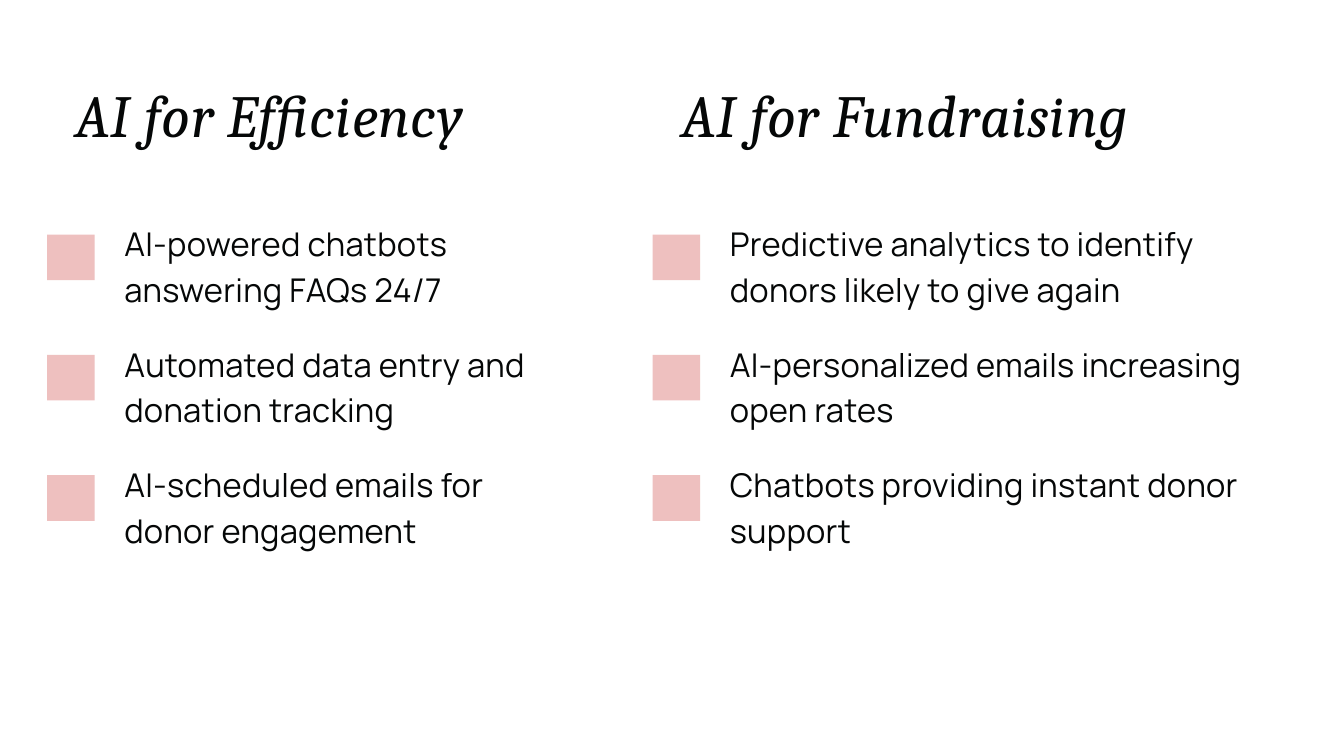
import pptx
import pptx.util
import pptx.dml.color
import pptx.enum.shapes
import pptx.enum.text

Inches = pptx.util.Inches
Pt = pptx.util.Pt
RGB = pptx.dml.color.RGBColor.from_string

COLORS = {"ink": "050707", "marker": "EEC0BF"}
COLUMNS = [
    (0.7, "AI for Efficiency", [
        ["AI-powered chatbots", "answering FAQs 24/7"],
        ["Automated data entry and donation tracking"],
        ["AI-scheduled emails for", "donor engagement"],
    ]),
    (9.71, "AI for Fundraising", [
        ["Predictive analytics to identify donors likely to give again"],
        ["AI-personalized emails increasing open rates"],
        ["Chatbots providing instant donor support"],
    ]),
]
ROW_TOP, ROW_STEP = 3.24, 1.79


def place(sp, left, top, width, height):
    sp.left, sp.top = Inches(left), Inches(top)
    sp.width, sp.height = Inches(width), Inches(height)


def write(sp, lines, font, size, leading, spacing, italic=False):
    tf = sp.text_frame
    tf.margin_left = tf.margin_right = tf.margin_top = tf.margin_bottom = 0
    tf.word_wrap = True
    tf.auto_size = pptx.enum.text.MSO_AUTO_SIZE.SHAPE_TO_FIT_TEXT
    tf.vertical_anchor = pptx.enum.text.MSO_ANCHOR.TOP
    tf.text = "\n".join(lines)
    for p in tf.paragraphs:
        p.alignment = pptx.enum.text.PP_ALIGN.LEFT
        p.line_spacing = Pt(leading)
        p.space_before = Pt(0)
        p.font.name = font
        p.font.size = Pt(size)
        p.font.italic = italic
        p.font.color.rgb = RGB(COLORS["ink"])
        for r in p.runs:
            r._r.get_or_add_rPr().set("spc", str(spacing))


prs = pptx.Presentation()
prs.slide_width, prs.slide_height = Inches(20), Inches(11.25)
s = prs.slides.add_slide(prs.slide_layouts[5])

for col, (left, heading, items) in enumerate(COLUMNS):
    sp = s.shapes.title if col == 0 else s.shapes.add_textbox(0, 0, 0, 0)
    place(sp, left + 0.43, 1.02, 8.02, 1.17)
    write(sp, [heading], "Cambria", 64, 87, 60, italic=True)

    for row, lines in enumerate(items):
        top = ROW_TOP + row * ROW_STEP
        sp = s.shapes.add_textbox(0, 0, 0, 0)
        place(sp, left + 1.15, top, 7.72, 1.35)
        write(sp, lines, "Manrope", 35, 49, 30)

        sp = s.shapes.add_shape(pptx.enum.shapes.MSO_SHAPE.RECTANGLE, 0, 0, 0, 0)
        place(sp, left, top + 0.25, 0.71, 0.68)
        sp.fill.solid()
        sp.fill.fore_color.rgb = RGB(COLORS["marker"])
        sp.line.fill.background()
        sp.shadow.inherit = False

prs.save("out.pptx")
